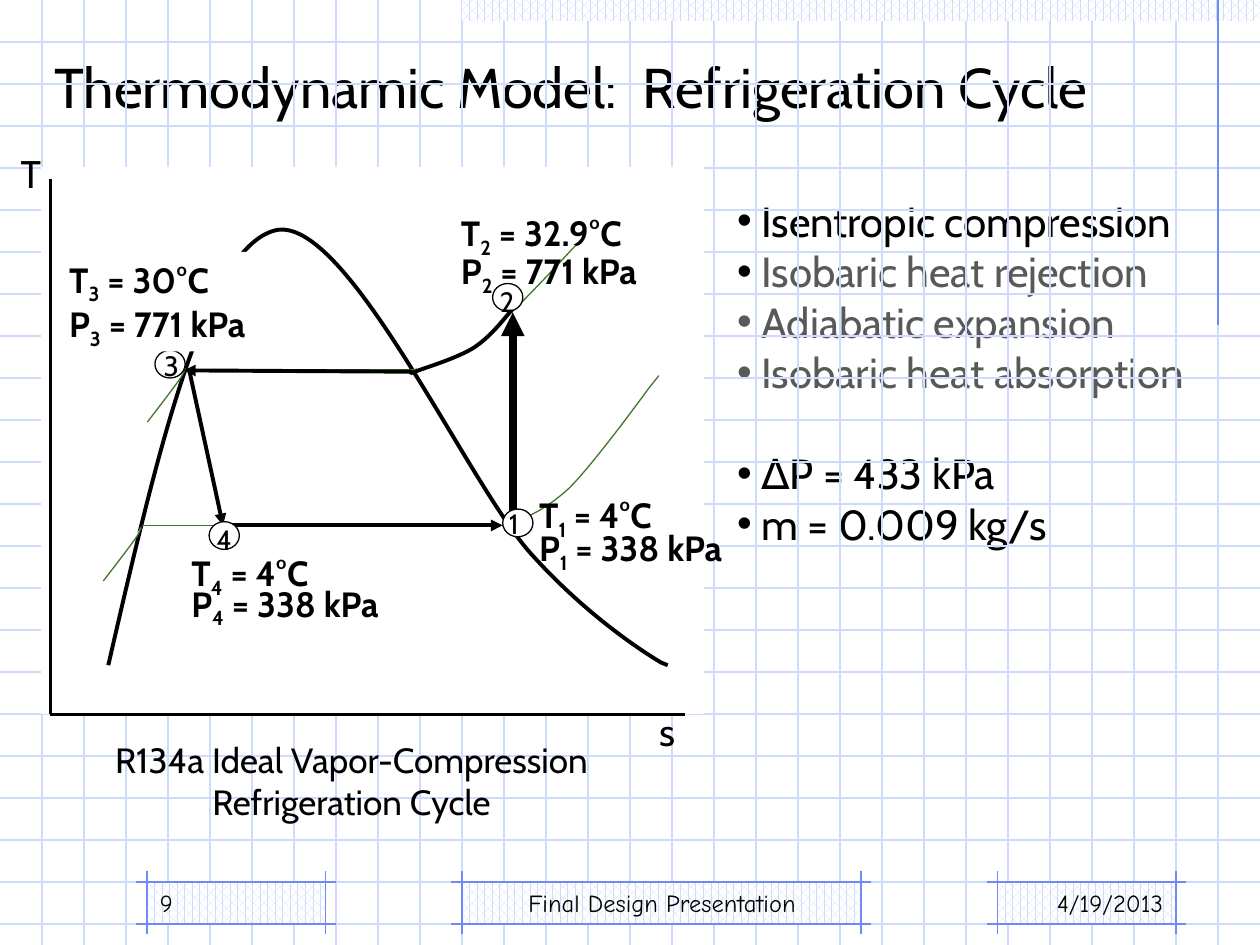
from dataclasses import dataclass
from math import cos, radians, sin

from lxml import etree
from pptx import Presentation
from pptx.dml.color import RGBColor
from pptx.enum.dml import MSO_PATTERN
from pptx.enum.shapes import MSO_CONNECTOR, MSO_SHAPE
from pptx.enum.text import MSO_ANCHOR, MSO_AUTO_SIZE, PP_ALIGN
from pptx.oxml.ns import qn
from pptx.util import Cm, Pt

RECT, OVAL = MSO_SHAPE.RECTANGLE, MSO_SHAPE.OVAL
STRAIGHT = MSO_CONNECTOR.STRAIGHT
DOTS = MSO_PATTERN.PERCENT_60
LEFT, MID, RIGHT = PP_ALIGN.LEFT, PP_ALIGN.CENTER, PP_ALIGN.RIGHT
TOP, BOTTOM = MSO_ANCHOR.TOP, MSO_ANCHOR.BOTTOM
FIXED = MSO_AUTO_SIZE.NONE
WIDE, HIGH = 10, 7.5


@dataclass(frozen=True)
class Theme:
    ink: str = "000000"
    gray: str = "595959"
    paper: str = "FFFFFF"
    pale: str = "CFDBFD"
    blue: str = "6F89F7"
    green: str = "417632"
    font: str = "Cabin"
    foot: str = "Comic Neue"
    title: int = 32
    body: int = 24
    axis: int = 22
    label: int = 20
    mark: int = 16
    small: int = 14
    thin: float = 0.75
    rule: float = 1.5
    thick: float = 2.25
    heavy: float = 4.5


THEME = Theme()


def rgb(code):
    return RGBColor.from_string(code)


def units(*sizes):
    """Turn layout units of 2.54 cm into lengths."""
    return [Cm(2.54 * size) for size in sizes]


def write(para, text, size=THEME.label, color=THEME.ink, font=THEME.font, bold=False, base=0):
    """Add a run to para; base is the baseline shift in percent."""
    run = para.add_run()
    run.text = text
    run.font.size, run.font.name, run.font.bold = Pt(size), font, bold
    run.font.color.rgb = rgb(color)
    if base:
        run._r.get_or_add_rPr().set("baseline", str(base * 1000))


def turn(point, mid, angle):
    """Rotate a point about mid by an angle in degrees, clockwise."""
    x, y = point[0] - mid[0], point[1] - mid[1]
    c, s = cos(radians(angle)), sin(radians(angle))
    return mid[0] + x * c - y * s, mid[1] + x * s + y * c


class Page:
    def __init__(self, deck, theme):
        self.theme = theme
        self.slide = deck.slides.add_slide(deck.slide_layouts[1])
        self.shapes = self.slide.shapes

    def frame(self, shape, box, anchor=TOP):
        shape.left, shape.top, shape.width, shape.height = units(*box)
        frame = shape.text_frame
        frame.word_wrap, frame.auto_size, frame.vertical_anchor = True, FIXED, anchor
        return frame

    def title(self, text, box):
        para = self.frame(self.shapes.title, box, BOTTOM).paragraphs[0]
        para.alignment = LEFT
        write(para, text, size=self.theme.title)

    def list(self, items, box):
        """Fill the body with (text, text color, bullet color, space before)."""
        frame = self.frame(self.slide.placeholders[1], box)
        for i, (text, color, dot, gap) in enumerate(items):
            para = frame.add_paragraph() if i else frame.paragraphs[0]
            para.space_before = Pt(gap)
            props = para._p.get_or_add_pPr()
            props.set("marL", str(Cm(0.49)))
            props.set("indent", str(Cm(-0.49)))
            tint = etree.SubElement(props, qn("a:buClr"))
            etree.SubElement(tint, qn("a:srgbClr"), val=dot)
            etree.SubElement(props, qn("a:buFont"), typeface="Arial")
            etree.SubElement(props, qn("a:buChar"), char="•")
            write(para, text, size=self.theme.body, color=color)

    def text(self, text, box, align=LEFT, anchor=TOP, **style):
        shape = self.shapes.add_textbox(*units(*box))
        para = self.frame(shape, box, anchor).paragraphs[0]
        para.alignment = align
        write(para, text, **style)

    def label(self, sign, num, value, box, fill):
        """Write a state value, its number set below the line."""
        shape = self.shapes.add_textbox(*units(*box))
        para = self.frame(shape, box).paragraphs[0]
        if fill:
            shape.fill.solid()
            shape.fill.fore_color.rgb = rgb(self.theme.paper)
        write(para, sign, bold=True)
        write(para, num, bold=True, base=-25)
        write(para, f" = {value}", bold=True)

    def paint(self, shape, color, width):
        shape.shadow.inherit = False
        shape.fill.solid()
        shape.fill.fore_color.rgb = rgb(self.theme.paper)
        shape.line.color.rgb = rgb(color)
        shape.line.width = Pt(width)

    def block(self, kind, box, color):
        shape = self.shapes.add_shape(kind, *units(*box))
        self.paint(shape, color, self.theme.thin)

    def line(self, start, end, color, width=THEME.thin, arrow=False):
        line = self.shapes.add_connector(STRAIGHT, *units(*start, *end))
        line.line.color.rgb = rgb(color)
        line.line.width = Pt(width)
        props = line._element.spPr
        if arrow:
            etree.SubElement(props.find(qn("a:ln")), qn("a:tailEnd"), type="triangle")
        etree.SubElement(props, qn("a:effectLst"))

    def curve(self, points, color, width=THEME.thin, mid=(0, 0), angle=0):
        """Draw cubic curves, three points each; a point left over ends a line."""
        spots = [units(*turn(point, mid, -angle)) for point in points]
        pen = self.shapes.build_freeform(*spots[0], scale=1.0)
        pen.add_line_segments(spots[1:], close=False)
        shape = pen.convert_to_shape()
        steps = list(shape._element.iter(qn("a:lnTo")))
        for i in range(0, len(steps) - 2, 3):
            arc = etree.Element(qn("a:cubicBezTo"))
            steps[i].addprevious(arc)
            for step in steps[i:i + 3]:
                arc.append(step[0])
                step.getparent().remove(step)
        shape.rotation = angle
        self.paint(shape, color, width)

    def band(self, x, y, width, height):
        shape = self.shapes.add_shape(RECT, *units(x, y, width, height))
        shape.shadow.inherit = False
        shape.fill.patterned()
        shape.fill.pattern = DOTS
        shape.fill.fore_color.rgb = rgb(self.theme.pale)
        shape.fill.back_color.rgb = rgb(self.theme.paper)
        shape.line.fill.background()

    def grid(self, gap):
        for i in range(1, int(HIGH / gap) + 1):
            self.line((0, i * gap), (WIDE, i * gap), self.theme.pale)
        for i in range(1, round(WIDE / gap)):
            self.line((i * gap, 0), (i * gap, HIGH), self.theme.pale)

    def panel(self, x, width):
        """Draw a footer band with lines that cross at its corners."""
        top, low, over = 7, 7 + 1 / 3, 1 / 12
        self.band(x, top, width, low - top)
        for y in (top, low):
            self.line((x - over, y), (x + width + over, y), self.theme.blue)
        for side in (x, x + width):
            self.line((side, top - over), (side, low + over), self.theme.blue)

    def mark(self, num, x, y, dx, dy):
        self.block(OVAL, (x, y, 0.24, 0.22), self.theme.ink)
        self.text(num, (x - dx, y - dy, 0.24, 0.37), size=self.theme.mark)


def main():
    deck = Presentation()
    deck.slide_width, deck.slide_height = units(WIDE, HIGH)
    look = THEME
    page = Page(deck, look)

    page.grid(1 / 3)
    page.band(11 / 3, 0, 19 / 3, 1 / 6)
    for x, width in ((44, 38), (95, 17), (14, 17)):
        page.panel(x / 12, width / 12)
    page.line((29 / 3, 0), (29 / 3, 2.58), look.blue)
    page.block(RECT, (0.33, 1.33, 5.25, 4.33), look.paper)
    for text, x, width, align in (("4/19/2013", 7.25, 2.08, RIGHT),
                                  ("Final Design Presentation", 3.67, 3.17, MID),
                                  ("9", 1.17, 2.08, LEFT)):
        page.text(text, (x, 6.83, width, 0.5), align, BOTTOM, size=look.small, font=look.foot)

    page.title("Thermodynamic Model:  Refrigeration Cycle", (0.33, 0.33, 8.92, 0.67))
    page.list([("Isentropic compression", look.ink, look.ink, 0),
               ("Isobaric heat rejection", look.gray, look.ink, 0),
               ("Adiabatic expansion", look.gray, look.gray, 0),
               ("Isobaric heat absorption", look.gray, look.gray, 0),
               ("∆P = 433 kPa", look.ink, look.ink, 29),
               ("m = 0.009 kg/s", look.ink, look.ink, 0)], (5.75, 1.5, 4.41, 4.14))

    for text, x, y in (("s", 4.82, 5.57), ("T", -0.23, 1.14)):
        page.text(text, (x, y, 0.95, 0.47), MID, size=look.axis)
    page.line((0.4, 1.42), (0.4, 5.67), look.ink, look.rule)
    page.line((0.4, 5.67), (5.44, 5.67), look.ink, look.rule)

    page.curve([(0.86, 5.28), (1.24, 3.63), (1.62, 1.98), (2.18, 1.83), (2.74, 1.68), (3.7, 3.82),
                (4.21, 4.39), (4.72, 4.96), (5.25, 5.26), (5.25, 5.26), (5.3, 5.28)],
               look.ink, look.thick)
    rise, drop = ((4.07, 4.17), (4.07, 2.48)), ((1.5, 2.93), (1.77, 4.17))
    for ends in (((1.13, 4.17), (3.99, 4.17)), ((3.29, 2.93), (1.46, 2.93)), rise, drop):
        page.line(*ends, look.green)
    page.curve([(3.27, 2.94), (3.44, 2.9), (3.61, 2.86), (3.82, 2.7), (4.03, 2.54), (4.54, 1.98),
                (4.54, 1.98), (4.63, 1.89)], look.green, mid=(3.955, 2.41), angle=349.4)
    tail = [(0, 0), (0.1, 0.13), (0.2, 0.26), (0.25, 0.33), (0.3, 0.4), (0.29, 0.41),
            (0.3, 0.42), (0.3, 0.44), (0.3, 0.42), (0.29, 0.41)]
    for x, y, mid, angle in ((1.17, 3.35, (1.32, 3.13), 11), (0.82, 4.61, (0.98, 4.39), 9.9)):
        page.curve([(x + dx, y - dy) for dx, dy in tail], look.green, mid=mid, angle=angle)
    page.curve([(3.99, 4.18), (4.15, 4.12), (4.31, 4.06), (4.51, 3.88), (4.7, 3.7), (5.15, 3.08),
                (5.15, 3.08), (5.23, 2.98)], look.green, mid=(4.605, 3.58), angle=343.2)

    page.line(*rise, look.ink, look.heavy, arrow=True)
    page.line((1.77, 4.17), (3.99, 4.17), look.ink, look.thick, arrow=True)
    page.line(*drop, look.ink, look.thick, arrow=True)
    page.curve([(4.06, 2.46), (3.97, 2.57), (3.88, 2.68), (3.76, 2.76), (3.63, 2.84), (3.4, 2.91),
                (3.32, 2.94), (3.24, 2.97), (3.26, 2.96), (3.27, 2.95)],
               look.ink, look.thick, mid=(3.655, 2.71), angle=5.1)
    page.line((3.27, 2.95), (1.46, 2.94), look.ink, look.thick, arrow=True)

    # number, ring place and shift, label x, T and P as (text, y, width), white fill
    states = [
        ("1", (3.99, 4.04, 0.05, 0.07), 4.18, ("4°C", 3.87, 1.58), ("338 kPa", 4.13, 1.81), False),
        ("2", (3.91, 2.25, 0.04, 0.04), 3.56, ("32.9°C", 1.63, 2.03), ("771 kPa", 1.93, 2.03), False),
        ("3", (1.23, 2.78, 0.03, 0.06), 0.45, ("30°C", 2, 1.58), ("771 kPa", 2.35, 2.16), True),
        ("4", (1.66, 4.14, 0.04, 0.04), 1.42, ("4°C", 4.33, 1.58), ("338 kPa", 4.57, 1.81), False)]
    for num, ring, left, heat, force, fill in states:
        page.mark(num, *ring)
        for sign, (value, y, width) in (("P", force), ("T", heat)):
            page.label(sign, num, value, (left, y, width, 0.44), fill)
    page.text("R134a Ideal Vapor-Compression Refrigeration Cycle",
              (0.58, 5.81, 4.42, 0.77), MID, size=look.label)
    deck.save("out.pptx")


if __name__ == "__main__":
    main()
